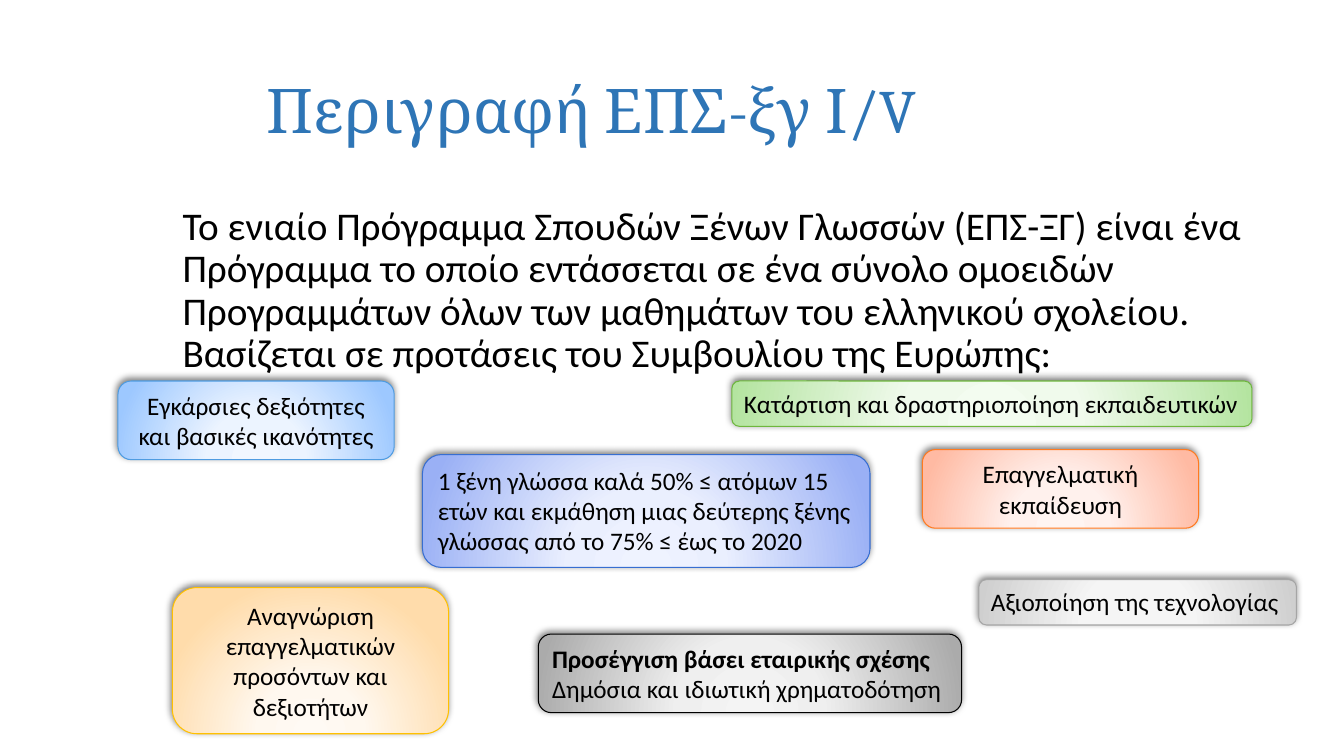
"""Build the slide that describes the unified foreign language curriculum."""
from dataclasses import dataclass

from pptx import Presentation
from pptx.dml.color import RGBColor
from pptx.enum.shapes import MSO_SHAPE as Preset
from pptx.enum.text import MSO_ANCHOR as Anchor, MSO_AUTO_SIZE as AutoSize, PP_ALIGN as Align
from pptx.oxml import parse_xml
from pptx.oxml.ns import nsdecls, qn
from pptx.util import Inches, Pt


@dataclass(frozen=True)
class Theme:
    """Colours, fonts and type sizes of the slide."""
    title_font: str = "Cambria"
    body_font: str = "Calibri"
    title_color: str = "2E75B6"
    text_color: str = "000000"
    title_size: int = 44
    body_size: int = 28
    card_size: int = 18
    border_width: float = 0.75


@dataclass(frozen=True)
class Area:
    """A rectangle in percent of the slide's width and height."""
    left: float
    top: float
    width: float
    height: float


@dataclass(frozen=True)
class Palette:
    """Gradient colours from centre to edge, and the border colour."""
    centre: str
    middle: str
    edge: str
    border: str


@dataclass(frozen=True)
class Card:
    """A rounded box with its text."""
    area: Area
    palette: Palette
    lines: tuple[str, ...]
    centred: bool = False
    wrap: bool = True
    bold_first: bool = False


THEME = Theme()
SLIDE_WIDTH, SLIDE_HEIGHT = Inches(13.33), Inches(7.5)
TITLE = "Περιγραφή ΕΠΣ-ξγ Ι/V"
BODY = (
    "Το ενιαίο Πρόγραμμα Σπουδών Ξένων Γλωσσών (ΕΠΣ-ΞΓ) είναι ένα Πρόγραμμα "
    "το οποίο εντάσσεται σε ένα σύνολο ομοειδών Προγραμμάτων όλων των μαθημάτων "
    "του ελληνικού σχολείου. Βασίζεται σε προτάσεις του Συμβουλίου της Ευρώπης:"
)
TITLE_AREA = Area(19.05, 5.33, 74.1, 19.33)
BODY_AREA = Area(12.83, 26.67, 80.33, 63.47)
NARROW, ONE_LINE, TWO_LINES = 20.55, 6, 10.4
CARDS = (
    Card(Area(8.78, 50.4, NARROW, TWO_LINES),
         Palette("F1F7FF", "ECF4FF", "9DC8FF", "4F9CE1"),
         ("Εγκάρσιες δεξιότητες και βασικές ικανότητες",), centred=True),
    Card(Area(68.63, 59.47, NARROW, TWO_LINES),
         Palette("FFF5F2", "FFF1ED", "FFBAA3", "FF7A1F"),
         ("Επαγγελματική εκπαίδευση",), centred=True),
    Card(Area(12.83, 77.73, NARROW, 19.33),
         Palette("FFFAF4", "FFF8EF", "FFDCAB", "FFC000"),
         ("Αναγνώριση επαγγελματικών προσόντων και δεξιοτήτων",), centred=True),
    Card(Area(72.83, 76.67, 23.63, ONE_LINE),
         Palette("F8F8F8", "F5F5F5", "CFCFCF", "A5A5A5"),
         ("Αξιοποίηση της τεχνολογίας",), wrap=False),
    Card(Area(54.45, 50.4, 38.7, ONE_LINE),
         Palette("F3FCF0", "F0FAEC", "B4E4A0", "6EB73D"),
         ("Κατάρτιση και δραστηριοποίηση εκπαιδευτικών",), wrap=False),
    Card(Area(40.05, 83.87, 31.5, TWO_LINES),
         Palette("F4F4F4", "EFEFEF", "ABABAB", "000000"),
         ("Προσέγγιση βάσει εταιρικής σχέσης", "Δημόσια και ιδιωτική χρηματοδότηση"),
         bold_first=True),
    Card(Area(31.43, 60.13, 33.3, 14.93),
         Palette("EFF3FF", "EAEFFE", "9AB0F5", "376ED1"),
         ("1 ξένη γλώσσα καλά 50% ≤ ατόμων 15 ετών και εκμάθηση μιας δεύτερης "
          "ξένης γλώσσας από το 75% ≤ έως το 2020",)),
)


def frame(area: Area) -> tuple[int, int, int, int]:
    """Turn an area into left, top, width and height."""
    return (int(SLIDE_WIDTH * area.left / 100), int(SLIDE_HEIGHT * area.top / 100),
            int(SLIDE_WIDTH * area.width / 100), int(SLIDE_HEIGHT * area.height / 100))


def style(paragraph, font_name: str, size: int, color: str, bold: bool = False) -> None:
    """Set the font of a whole paragraph."""
    font = paragraph.font
    font.name, font.size, font.bold = font_name, Pt(size), bold
    font.color.rgb = RGBColor.from_string(color)


def fill_placeholder(placeholder, area: Area, text: str, anchor: Anchor):
    """Move a placeholder, write its text and return its paragraph."""
    placeholder.left, placeholder.top, placeholder.width, placeholder.height = frame(area)
    text_frame = placeholder.text_frame
    text_frame.text = text
    text_frame.word_wrap = True
    text_frame.auto_size = AutoSize.NONE
    text_frame.vertical_anchor = anchor
    paragraph = text_frame.paragraphs[0]
    paragraph.alignment = Align.LEFT
    paragraph.line_spacing = 0.9
    paragraph.space_before = Pt(0)
    return paragraph


def add_glow(shape, palette: Palette) -> None:
    """Give a shape its radial gradient and soft shadow."""
    stops = "".join(
        f'<a:gs pos="{position * 1000}"><a:srgbClr val="{color}"/></a:gs>'
        for position, color in ((0, palette.centre), (34, palette.middle), (100, palette.edge)))
    properties = shape._element.spPr
    properties.find(qn("a:prstGeom")).addnext(parse_xml(
        f'<a:gradFill {nsdecls("a")} rotWithShape="1"><a:gsLst>{stops}</a:gsLst>'
        '<a:path path="circle"><a:fillToRect l="50000" t="155000" r="50000" b="-55000"/>'
        '</a:path></a:gradFill>'))
    shape.shadow.inherit = False
    properties.find(qn("a:effectLst")).append(parse_xml(
        f'<a:outerShdw {nsdecls("a")} blurRad="{Pt(5)}" dist="{Pt(2)}" dir="{245 * 60000}" '
        'algn="ctr" rotWithShape="0"><a:srgbClr val="000000"><a:alpha val="50000"/>'
        '</a:srgbClr></a:outerShdw>'))


def add_card(slide, card: Card) -> None:
    """Draw one rounded box with its text."""
    shape = slide.shapes.add_shape(Preset.FLOWCHART_ALTERNATE_PROCESS, *frame(card.area))
    shape.line.color.rgb = RGBColor.from_string(card.palette.border)
    shape.line.width = Pt(THEME.border_width)
    add_glow(shape, card.palette)
    text_frame = shape.text_frame
    text_frame.text = "\n".join(card.lines)
    text_frame.word_wrap = card.wrap
    text_frame.auto_size = AutoSize.SHAPE_TO_FIT_TEXT
    text_frame.vertical_anchor = Anchor.MIDDLE if card.centred else Anchor.TOP
    for index, paragraph in enumerate(text_frame.paragraphs):
        paragraph.alignment = Align.CENTER if card.centred else Align.LEFT
        style(paragraph, THEME.body_font, THEME.card_size, THEME.text_color,
              bold=card.bold_first and index == 0)


def main() -> None:
    """Build and save the presentation."""
    presentation = Presentation()
    presentation.slide_width, presentation.slide_height = SLIDE_WIDTH, SLIDE_HEIGHT
    slide = presentation.slides.add_slide(presentation.slide_layouts[1])
    title = fill_placeholder(slide.shapes.title, TITLE_AREA, TITLE, Anchor.MIDDLE)
    style(title, THEME.title_font, THEME.title_size, THEME.title_color)
    body = fill_placeholder(slide.placeholders[1], BODY_AREA, BODY, Anchor.TOP)
    properties = body._p.get_or_add_pPr()
    properties.set("marL", "0")
    properties.set("indent", "0")
    properties.append(parse_xml(f'<a:buNone {nsdecls("a")}/>'))
    style(body, THEME.body_font, THEME.body_size, THEME.text_color)
    for card in CARDS:
        add_card(slide, card)
    presentation.save("out.pptx")


if __name__ == "__main__":
    main()
